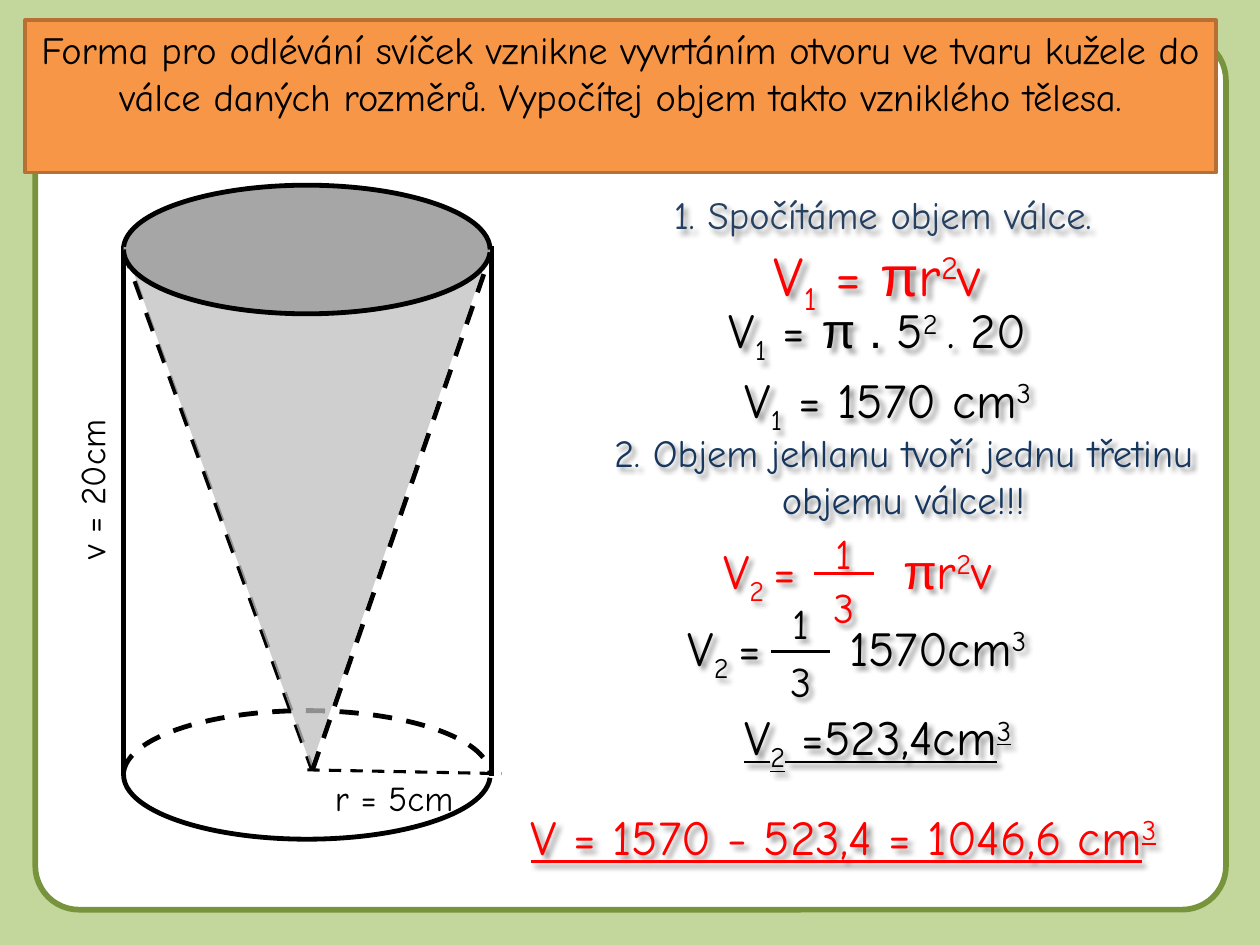
import pptx
import pptx.dml.color
import pptx.enum.dml
import pptx.enum.shapes
import pptx.enum.text
import pptx.oxml
import pptx.oxml.ns
import pptx.util

Inches = pptx.util.Inches
Pt = pptx.util.Pt
SHAPE = pptx.enum.shapes.MSO_SHAPE
ALIGN = pptx.enum.text.PP_ALIGN
NS = pptx.oxml.ns.nsdecls("a")
FONT = "Comic Neue"
BLACK, RED = "000000", "FF0000"
SUB, SUP = -25000, 30000
LEFT, WIDTH, DEPTH = 0.98, 2.91, 1.02
TOP_Y, BASE_Y = 1.47, 5.64


def rgb(color):
    """Return an RGB colour from a hex string."""
    return pptx.dml.color.RGBColor.from_string(color)


def set_line(line, color, width, dashed=False):
    """Set colour, width and dash of a line."""
    line.color.rgb = rgb(color)
    line.width = Pt(width)
    if dashed:
        line.dash_style = pptx.enum.dml.MSO_LINE.DASH


def add_shape(s, kind, box, fill=None, line=None):
    """Add a preset shape with an optional fill and outline."""
    sp = s.shapes.add_shape(kind, *map(Inches, box))
    sp.shadow.inherit = False
    if fill:
        sp.fill.solid()
        sp.fill.fore_color.rgb = rgb(fill)
    else:
        sp.fill.background()
    if line:
        set_line(sp.line, *line)
    else:
        sp.line.fill.background()
    return sp


def add_half_ellipse(s, top, lower=False, dashed=False):
    """Add the back or front half of a cylinder rim."""
    sp = add_shape(s, SHAPE.ARC, (LEFT, top, WIDTH, DEPTH), None, (BLACK, 2.75, dashed))
    sp.adjustments[0] = 108.54
    sp.adjustments[1] = 0
    sp.rotation = 180 if lower else 0


def add_line(s, start, end, color, width, dashed=False):
    """Add a straight line without a shadow."""
    ends = [Inches(v) for v in (*start, *end)]
    line = s.shapes.add_connector(pptx.enum.shapes.MSO_CONNECTOR.STRAIGHT, *ends)
    line._element.spPr.append(pptx.oxml.parse_xml(f"<a:effectLst {NS}/>"))
    set_line(line.line, color, width, dashed)


def add_cone(s, points):
    """Add the translucent cone inside the cylinder."""
    start, *rest = [tuple(map(Inches, point)) for point in points]
    builder = s.shapes.build_freeform(*start)
    builder.add_line_segments(rest, close=True)
    sp = builder.convert_to_shape()
    sp.shadow.inherit = False
    sp.line.fill.background()
    sp.fill.solid()
    sp.fill.fore_color.rgb = rgb("BFBFBF")
    color = sp._element.spPr.find(".//" + pptx.oxml.ns.qn("a:srgbClr"))
    color.append(pptx.oxml.parse_xml(f'<a:alpha {NS} val="75000"/>'))


def fill_text(sp, runs, size, color, align=ALIGN.CENTER, underline=False):
    """Write runs of text, baseline shift and font into a shape."""
    tf = sp.text_frame
    tf.word_wrap = True
    tf.vertical_anchor = pptx.enum.text.MSO_ANCHOR.TOP
    p = tf.paragraphs[0]
    p.alignment = align
    for text, shift, font in runs:
        r = p.add_run()
        r.text = text
        r.font.name = font
        r.font.size = Pt(size)
        r.font.color.rgb = rgb(color)
        if underline:
            r.font.underline = True
        if shift:
            r._r.get_or_add_rPr().set("baseline", str(shift))


def plain(text):
    """Return one run in the main font."""
    return (text, 0, FONT)


def sub(text):
    """Return one subscript run."""
    return (text, SUB, FONT)


def sup(text):
    """Return one superscript run."""
    return (text, SUP, FONT)


def greek(text):
    """Return one run in the font for Greek letters."""
    return (text, 0, "Arial")


def add_text(s, box, runs, size, color, align=ALIGN.CENTER, underline=False, shadow=True):
    """Add a text box, by default with a soft shadow under the letters."""
    sp = s.shapes.add_textbox(*map(Inches, box))
    fill_text(sp, runs, size, color, align, underline)
    if shadow:
        sp._element.spPr.append(pptx.oxml.parse_xml(
            f'<a:effectLst {NS}><a:outerShdw blurRad="38100" dist="38100" dir="2700000">'
            '<a:srgbClr val="000000"><a:alpha val="43000"/></a:srgbClr>'
            "</a:outerShdw></a:effectLst>"))
    return sp


def add_third(s, left, top, digit_tops, bar, tail_left, tail, color):
    """Add the cone volume formula with its one-third fraction."""
    add_text(s, (left, top, 1, 0.57), [plain("V"), sub("2 "), plain("=")], 28, color, ALIGN.LEFT)
    add_text(s, (tail_left, top, 1.8, 0.57), tail, 28, color, ALIGN.LEFT)
    x1, x2, y = bar
    for digit, digit_top in zip("13", digit_tops):
        add_text(s, ((x1 + x2 - 0.55) / 2, digit_top, 0.55, 0.5), [plain(digit)], 24, color)
    add_line(s, (x1, y), (x2, y), color, 2)


def draw_solid(s):
    """Draw the cylinder with the cone drilled out of it."""
    add_half_ellipse(s, BASE_Y, dashed=True)
    add_half_ellipse(s, BASE_Y, lower=True)
    tip = (2.48, 6.11)
    add_line(s, tip, (3.9, 2), BLACK, 2.75, True)
    add_line(s, (LEFT, 1.98), tip, BLACK, 2.75, True)
    for x in (LEFT, 3.9):
        add_line(s, (x, 6.16), (x, 1.95), BLACK, 2.5)
    add_line(s, (2.44, 6.11), (3.98, 6.14), BLACK, 1.75, True)
    add_cone(s, [(LEFT, 1.94), (2.47, 6.08), (3.87, 2.03)])
    add_shape(s, SHAPE.OVAL, (LEFT, TOP_Y, WIDTH, DEPTH), "A6A6A6")
    add_half_ellipse(s, TOP_Y)
    add_half_ellipse(s, TOP_Y, lower=True)
    height = add_text(s, (-0.02, 3.57, 1.5, 0.44), [plain("v = 20cm")], 20, BLACK,
                      ALIGN.LEFT, shadow=False)
    height.rotation = 270
    add_text(s, (2.56, 6.11, 1.42, 0.44), [plain("r = 5cm")], 20, BLACK, ALIGN.LEFT, shadow=False)


def write_solution(s):
    """Write the steps of the calculation."""
    add_text(s, (4.29, 1.47, 5.43, 0.47), [plain("1. Spočítáme objem válce.")], 22, "254061")
    add_text(s, (4.69, 3.36, 4.96, 0.84),
             [plain("2. Objem jehlanu tvoří jednu třetinu objemu válce!!!")], 22, "17375E")
    v1 = [plain("V"), sub("1")]
    area = [greek("π"), plain("r"), sup("2"), plain("v")]
    add_text(s, (4.92, 1.86, 4.09, 0.64), v1 + [plain(" = ")] + area, 32, RED)
    add_text(s, (4.92, 2.33, 4.09, 0.57),
             v1 + [plain(" = "), greek("π . "), plain("5"), sup("2 "), plain(". 20")], 28, BLACK)
    add_text(s, (5, 2.88, 4.09, 0.57), v1 + [plain(" = 1570 cm"), sup("3")], 28, BLACK)
    add_third(s, 5.64, 4.24, (4.14, 4.57), (6.46, 6.94, 4.55), 7.07, area, RED)
    add_third(s, 5.36, 4.85, (4.69, 5.15), (6.12, 6.59, 5.17), 6.64,
              [plain("1570cm"), sup("3")], BLACK)
    add_text(s, (4.92, 5.56, 4.09, 0.57),
             [plain("V"), sub("2"), plain(" =523,4cm"), sup("3")], 28, BLACK, underline=True)
    add_text(s, (3.82, 6.35, 5.75, 0.57),
             [plain("V = 1570 - 523,4 = 1046,6 cm"), sup("3")], 28, RED, underline=True)


def main():
    """Build the slide and save it."""
    prs = pptx.Presentation()
    prs.slide_width, prs.slide_height = Inches(10), Inches(7.5)
    s = prs.slides.add_slide(prs.slide_layouts[6])
    s.background.fill.solid()
    s.background.fill.fore_color.rgb = rgb("C3D69B")
    panel = add_shape(s, SHAPE.ROUNDED_RECTANGLE, (0.28, 0.29, 9.45, 6.93),
                      "FFFFFF", ("77933C", 3.25))
    panel.adjustments[0] = 0.05
    task = add_shape(s, SHAPE.RECTANGLE, (0.2, 0.16, 9.45, 1.21), "F79646", ("B76F34", 2))
    fill_text(task, [plain("Forma pro odlévání svíček vznikne vyvrtáním otvoru ve tvaru kužele "
                           "do válce daných rozměrů. Vypočítej objem takto vzniklého tělesa.")],
              22, BLACK)
    draw_solid(s)
    write_solution(s)
    prs.save("out.pptx")


if __name__ == "__main__":
    main()
